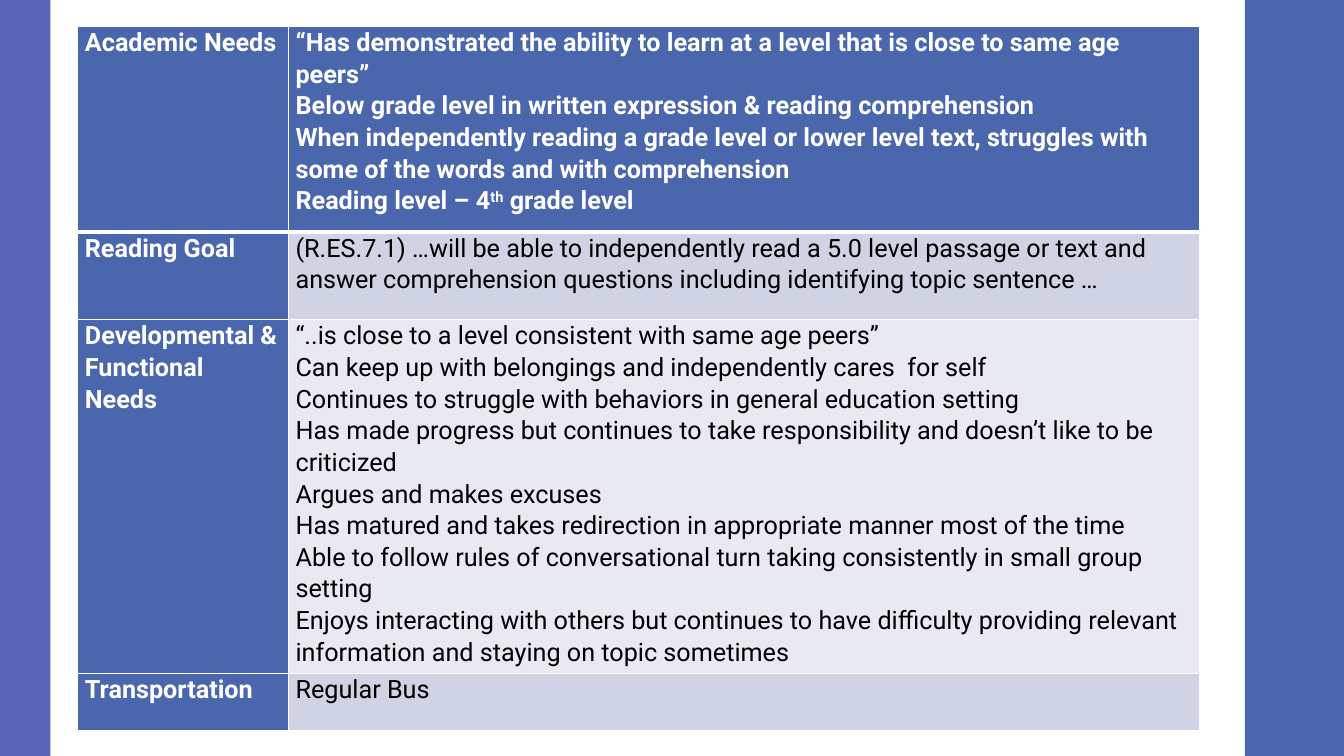
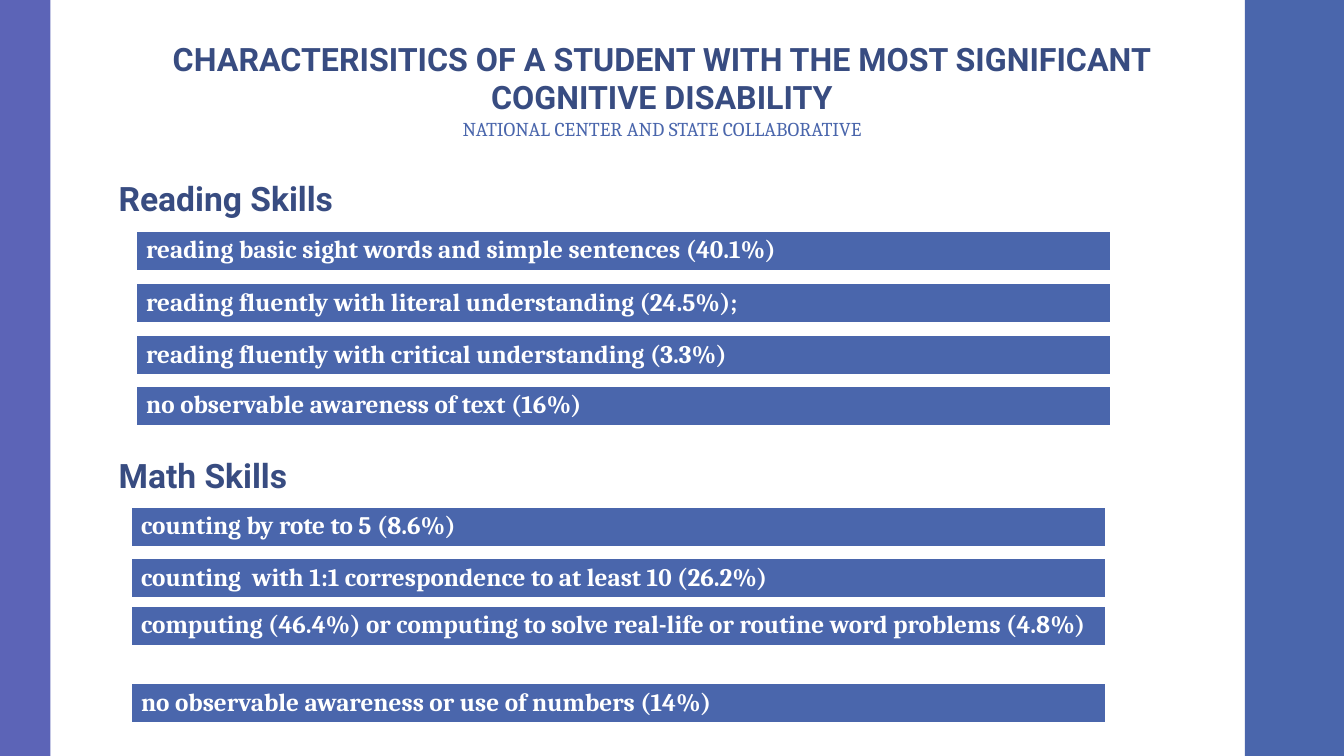
from lxml.etree import SubElement
from pptx import Presentation
from pptx.dml.color import RGBColor as RGB
from pptx.enum.shapes import MSO_SHAPE as SHAPE
from pptx.enum.text import MSO_ANCHOR as ANCHOR, MSO_AUTO_SIZE as FIT, PP_ALIGN as ALIGN
from pptx.oxml.ns import qn
from pptx.util import Cm, Pt

WIDE, HIGH = 33.87, 19.05
BLUE, NAVY, VIOLET = "4A66AC", "384C81", "5C64B7"
WHITE, BLACK, GREY, PALE = "FFFFFF", "000000", "D0D3E3", "E9EAF1"
SANS, SERIF = "Roboto", "Cambria"

NEEDS = [
    (5.18, "Academic Needs", [
        "“Has demonstrated the ability to learn at a level that is close to same age peers”",
        "Below grade level in written expression & reading comprehension",
        "When independently reading a grade level or lower level text, struggles with "
        "some of the words and with comprehension",
        "Reading level – 4^th^ grade level"]),
    (2.21, "Reading Goal", [
        "(R.ES.7.1) …will be able to independently read a 5.0 level passage or text and "
        "answer comprehension questions including identifying topic sentence …"]),
    (8.92, "Developmental & Functional Needs", [
        "“..is close to a level consistent with same age peers”",
        "Can keep up with belongings and independently cares  for self",
        "Continues to struggle with behaviors in general education setting",
        "Has made progress but continues to take responsibility and doesn’t like to be criticized",
        "Argues and makes excuses",
        "Has matured and takes redirection in appropriate manner most of the time",
        "Able to follow rules of conversational turn taking consistently in small group setting",
        "Enjoys interacting with others but continues to have difficulty providing relevant "
        "information and staying on topic sometimes"]),
    (1.45, "Transportation", ["Regular Bus"]),
]
SKILLS = [
    ("Reading Skills", 4.37, 3.43, [
        (5.82, "reading basic sight words and simple sentences (40.1%)"),
        (7.14, "reading fluently with literal understanding (24.5%);"),
        (8.46, "reading fluently with critical understanding (3.3%)"),
        (9.73, "no observable awareness of text (16%)")]),
    ("Math Skills", 11.35, 3.3, [
        (12.78, "counting by rote to 5 (8.6%)"),
        (14.07, "counting  with 1:1 correspondence to at least 10 (26.2%)"),
        (15.27, "computing (46.4%) or computing to solve real-life or routine word problems (4.8%)"),
        (17.22, "no observable awareness or use of numbers (14%)")]),
]


def paint(fill, tone):
    """Fill with one solid colour."""
    fill.solid()
    fill.fore_color.rgb = RGB.from_string(tone)


def write(para, text, size, face, tone, bold=True):
    """Add text to a paragraph, raising the parts between carets."""
    for i, part in enumerate(text.split("^")):
        run = para.add_run()
        run.text = part
        run.font.size, run.font.name, run.font.bold = Pt(size), face, bold
        paint(run.font.fill, tone)
        if i % 2:
            run.font._element.set("baseline", "30000")


def next_para(frame, first):
    """Return the frame's first paragraph or a new one."""
    return frame.paragraphs[0] if first else frame.add_paragraph()


def add_band(deck, slide, left, tone, key):
    """Draw a full-height band and hand it to the master."""
    wide = 1.27 if left == 0 else WIDE - left
    band = slide.shapes.add_shape(SHAPE.RECTANGLE, Cm(left), 0, Cm(wide), Cm(HIGH))
    band.shadow.inherit = False
    band.line.fill.background()
    paint(band.fill, tone)
    band.element.nvSpPr.cNvPr.set("id", str(key))
    deck.slide_master.shapes.element.append(band.element)


def edge(cell, base):
    """Give a cell white borders, the lower one of its own width."""
    props = cell._tc.get_or_add_tcPr()
    for side, width in zip("LRTB", (1, 1, 1, base)):
        line = SubElement(props, qn("a:ln" + side), w=str(Pt(width)))
        SubElement(SubElement(line, qn("a:solidFill")), qn("a:srgbClr"), val=WHITE)


def add_grid(slide, left, top, cols, rows):
    """Add a plain table with the given column and row sizes."""
    frame = slide.shapes.add_table(len(rows), len(cols), Cm(left), Cm(top),
                                   Cm(sum(cols)), Cm(sum(rows)))
    grid = frame.table
    grid.first_row = grid.horz_banding = False
    for col, wide in zip(grid.columns, cols):
        col.width = Cm(wide)
    for row, high in zip(grid.rows, rows):
        row.height = Cm(high)
    return grid


def fill_cell(cell, lines, tone, ink, bold, base):
    """Write the lines of a cell in the needs table."""
    edge(cell, base)
    paint(cell.fill, tone)
    cell.margin_left = cell.margin_right = Cm(0.18)
    cell.margin_top = cell.margin_bottom = 0
    for i, line in enumerate(lines):
        para = next_para(cell.text_frame, i == 0)
        para.line_spacing = 1.07
        write(para, line, 18, SANS, ink, bold)


def add_needs(slide):
    """Add the table of student needs."""
    grid = add_grid(slide, 1.96, 0.66, [5.31, 22.97], [row[0] for row in NEEDS])
    for i, (_, name, lines) in enumerate(NEEDS):
        base = 1 if i else 3
        fill_cell(grid.cell(i, 0), [name], BLUE, WHITE, True, base)
        tone = (GREY if i % 2 else PALE) if i else BLUE
        fill_cell(grid.cell(i, 1), lines, tone, BLACK if i else WHITE, i == 0, base)


def add_bar(slide, left, top, text):
    """Add a one-cell table holding a skill."""
    cell = add_grid(slide, left, top, [24.56], [1.02]).cell(0, 0)
    edge(cell, 3)
    paint(cell.fill, BLUE)
    write(cell.text_frame.paragraphs[0], text, 18, SERIF, WHITE)


def set_title(slide):
    """Place the title and the source line below it."""
    title = slide.shapes.title
    title.left, title.top, title.width, title.height = Cm(1.96), Cm(0.86), Cm(29.46), Cm(2.82)
    frame = title.text_frame
    frame.auto_size, frame.word_wrap = FIT.NONE, True
    frame.vertical_anchor = ANCHOR.TOP
    lines = [("CHARACTERISITICS OF A STUDENT WITH THE MOST SIGNIFICANT COGNITIVE DISABILITY",
              23, SANS, NAVY, True),
             ("NATIONAL CENTER AND STATE COLLABORATIVE", 14, SERIF, BLUE, False)]
    for i, line in enumerate(lines):
        para = next_para(frame, i == 0)
        para.alignment = ALIGN.CENTER
        write(para, *line)


def add_head(slide, top, text):
    """Add the heading of a skill group."""
    frame = slide.shapes.add_textbox(Cm(2.74), Cm(top), Cm(27.84), Cm(1.27)).text_frame
    frame.word_wrap = True
    write(frame.paragraphs[0], text, 24, SANS, NAVY)


def main():
    """Build and save both slides."""
    deck = Presentation()
    deck.slide_width, deck.slide_height = Cm(WIDE), Cm(HIGH)
    needs = deck.slides.add_slide(deck.slide_layouts[6])
    add_band(deck, needs, 31.37, BLUE, 101)
    add_band(deck, needs, 0, VIOLET, 102)
    add_needs(needs)

    skills = deck.slides.add_slide(deck.slide_layouts[5])
    set_title(skills)
    for name, top, left, bars in SKILLS:
        add_head(skills, top, name)
        for place, text in bars:
            add_bar(skills, left, place, text)
    deck.save("out.pptx")


if __name__ == "__main__":
    main()
